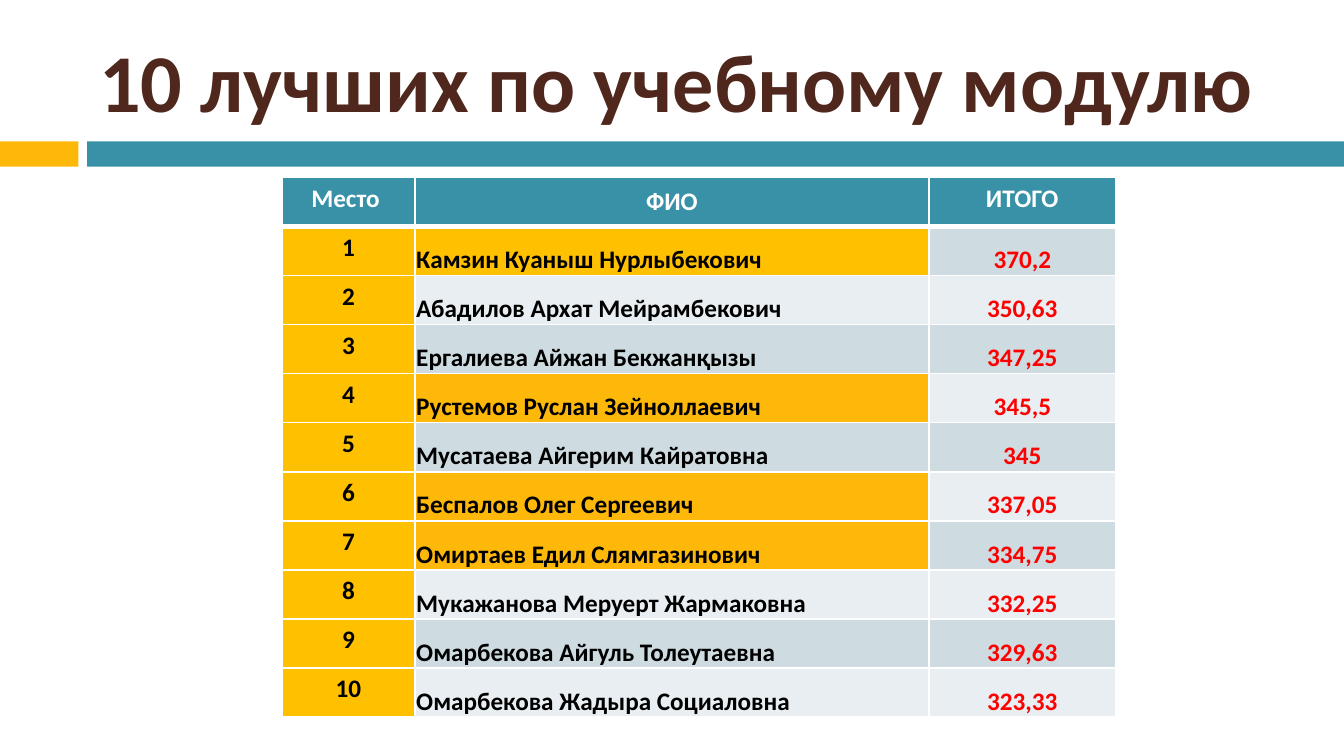
from typing import NamedTuple

from lxml.etree import SubElement
from pptx import Presentation
from pptx.dml.color import RGBColor
from pptx.enum.shapes import MSO_SHAPE
from pptx.enum.text import MSO_ANCHOR as Anchor, PP_ALIGN as Align
from pptx.oxml.ns import qn
from pptx.util import Cm, Pt

FONT = "Calibri"
COLORS = {
    "teal": "3891A7",
    "orange": "FEB80A",
    "gold": "FFC000",
    "brown": "4F271C",
    "band_dark": "CEDCE1",
    "band_light": "E8EEF1",
    "white": "FFFFFF",
    "black": "000000",
    "red": "FF0000",
}


class Bar(NamedTuple):
    left: float
    width: float
    color: str


class Student(NamedTuple):
    name: str
    total: str
    highlight: str = ""


class CellStyle(NamedTuple):
    fill: str
    color: str
    align: Align = Align.CENTER
    anchor: Anchor = Anchor.TOP
    tight: bool = False
    bottom_line: float = 1


BARS = [Bar(0, 1.65, "orange"), Bar(1.83, 26.39, "teal")]
HEADERS = ["Место ", "ФИО", "ИТОГО"]
COLUMN_WIDTHS = [2.79, 10.8, 3.91]
ROW_HEIGHT = 1.03
STUDENTS = [
    Student("Камзин Куаныш Нурлыбекович", "370,2", "gold"),
    Student("Абадилов Архат Мейрамбекович", "350,63"),
    Student("Ергалиева Айжан Бекжанқызы", "347,25"),
    Student("Рустемов Руслан Зейноллаевич", "345,5", "orange"),
    Student("Мусатаева Айгерим Кайратовна", "345"),
    Student("Беспалов Олег Сергеевич", "337,05", "orange"),
    Student("Омиртаев Едил Слямгазинович", "334,75", "orange"),
    Student("Мукажанова Меруерт Жармаковна", "332,25"),
    Student("Омарбекова Айгуль Толеутаевна", "329,63"),
    Student("Омарбекова Жадыра Социаловна", "323,33"),
]


def rgb(name: str) -> RGBColor:
    return RGBColor.from_string(COLORS[name])


def format_text(p, size: float, color: str, align: Align) -> None:
    p.alignment = align
    for r in p.runs:
        r.font.name = FONT
        r.font.size = Pt(size)
        r.font.bold = True
        r.font.color.rgb = rgb(color)


def draw_bar(slide, bar: Bar) -> None:
    s = slide.shapes.add_shape(
        MSO_SHAPE.RECTANGLE, Cm(bar.left), Cm(2.97), Cm(bar.width), Cm(0.53))
    s.shadow.inherit = False
    s.fill.solid()
    s.fill.fore_color.rgb = rgb(bar.color)
    s.line.fill.background()


def set_borders(cell, bottom: float) -> None:
    props = cell._tc.get_or_add_tcPr()
    # Border lines come before the fill in the cell properties
    for i, (side, width) in enumerate(
            [("lnL", 1), ("lnR", 1), ("lnT", 1), ("lnB", bottom)]):
        line = SubElement(props, qn(f"a:{side}"), w=str(Pt(width)))
        fill = SubElement(line, qn("a:solidFill"))
        SubElement(fill, qn("a:srgbClr"), val=COLORS["white"])
        props.insert(i, line)


def fill_cell(cell, text: str, style: CellStyle) -> None:
    cell.text_frame.text = text
    format_text(cell.text_frame.paragraphs[0], 15, style.color, style.align)
    cell.vertical_anchor = style.anchor
    if style.tight:
        cell.margin_left = cell.margin_right = cell.margin_top = Cm(0.03)
        cell.margin_bottom = 0
    cell.fill.solid()
    cell.fill.fore_color.rgb = rgb(style.fill)
    set_borders(cell, style.bottom_line)


def draw_title(slide, text: str) -> None:
    title = slide.shapes.title
    title.left, title.top, title.width, title.height = (
        Cm(1.88), Cm(0.53), Cm(25.17), Cm(2.29))
    tf = title.text_frame
    tf.text = text
    tf.word_wrap = True
    tf.vertical_anchor = Anchor.MIDDLE
    tf.margin_left = tf.margin_right = Cm(0.2)
    tf.margin_top = tf.margin_bottom = Cm(0.1)
    format_text(tf.paragraphs[0], 48.9, "brown", Align.LEFT)


def draw_ranking(slide) -> None:
    rows = len(STUDENTS) + 1
    table = slide.shapes.add_table(
        rows, len(HEADERS), Cm(5.92), Cm(3.73),
        Cm(sum(COLUMN_WIDTHS)), Cm(rows * ROW_HEIGHT)).table
    for column, width in zip(table.columns, COLUMN_WIDTHS):
        column.width = Cm(width)
    for row in table.rows:
        row.height = Cm(ROW_HEIGHT)

    # Header row
    for i, header in enumerate(HEADERS):
        anchor = Anchor.MIDDLE if header == "ФИО" else Anchor.TOP
        fill_cell(table.cell(0, i), header,
                  CellStyle("teal", "white", anchor=anchor, bottom_line=3))

    # Place, name and total of each student
    for place, student in enumerate(STUDENTS, start=1):
        band = "band_dark" if place % 2 else "band_light"
        fill_cell(table.cell(place, 0), str(place), CellStyle("gold", "black"))
        fill_cell(table.cell(place, 1), student.name,
                  CellStyle(student.highlight or band, "black", Align.LEFT,
                            Anchor.BOTTOM, tight=True))
        fill_cell(table.cell(place, 2), student.total,
                  CellStyle(band, "red", anchor=Anchor.BOTTOM, tight=True))


def main() -> None:
    prs = Presentation()
    prs.slide_width, prs.slide_height = Cm(28.22), Cm(15.88)
    slide = prs.slides.add_slide(prs.slide_layouts[5])
    for bar in BARS:
        draw_bar(slide, bar)
    draw_title(slide, "10 лучших по учебному модулю")
    draw_ranking(slide)
    prs.save("out.pptx")


if __name__ == "__main__":
    main()
